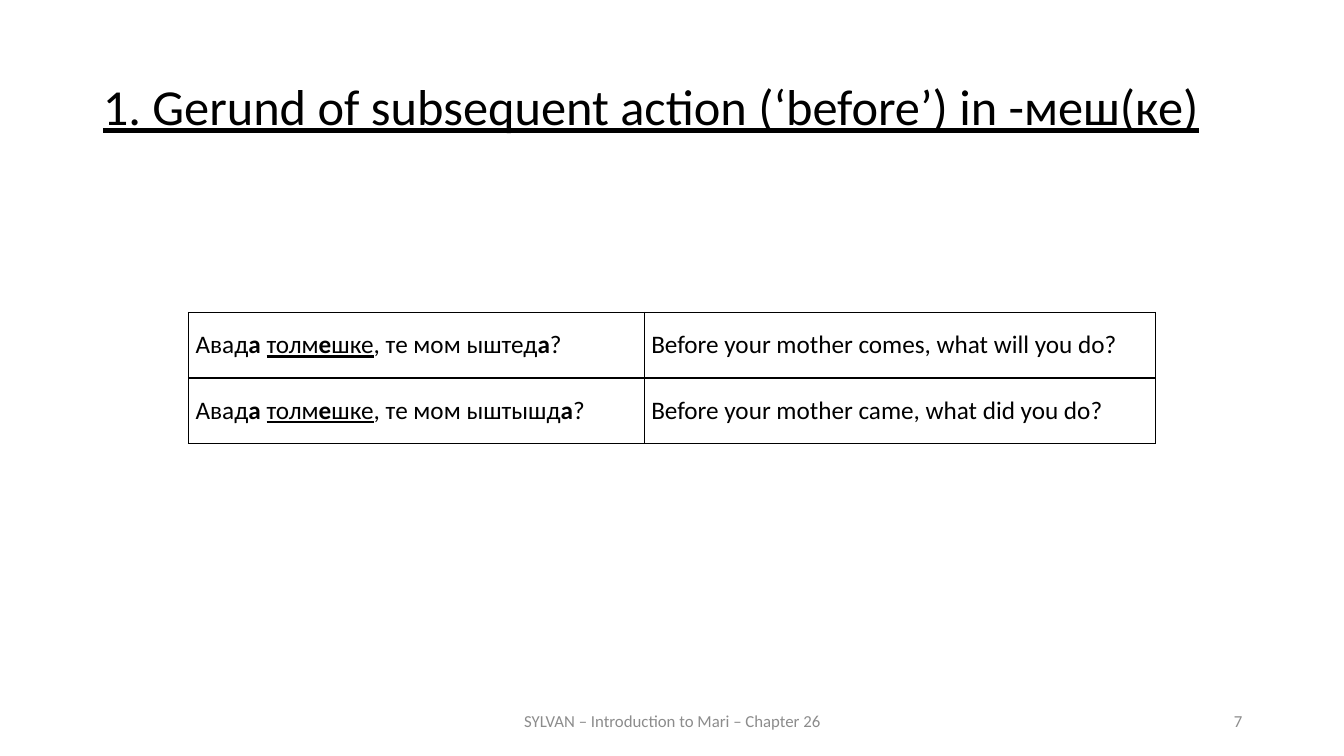
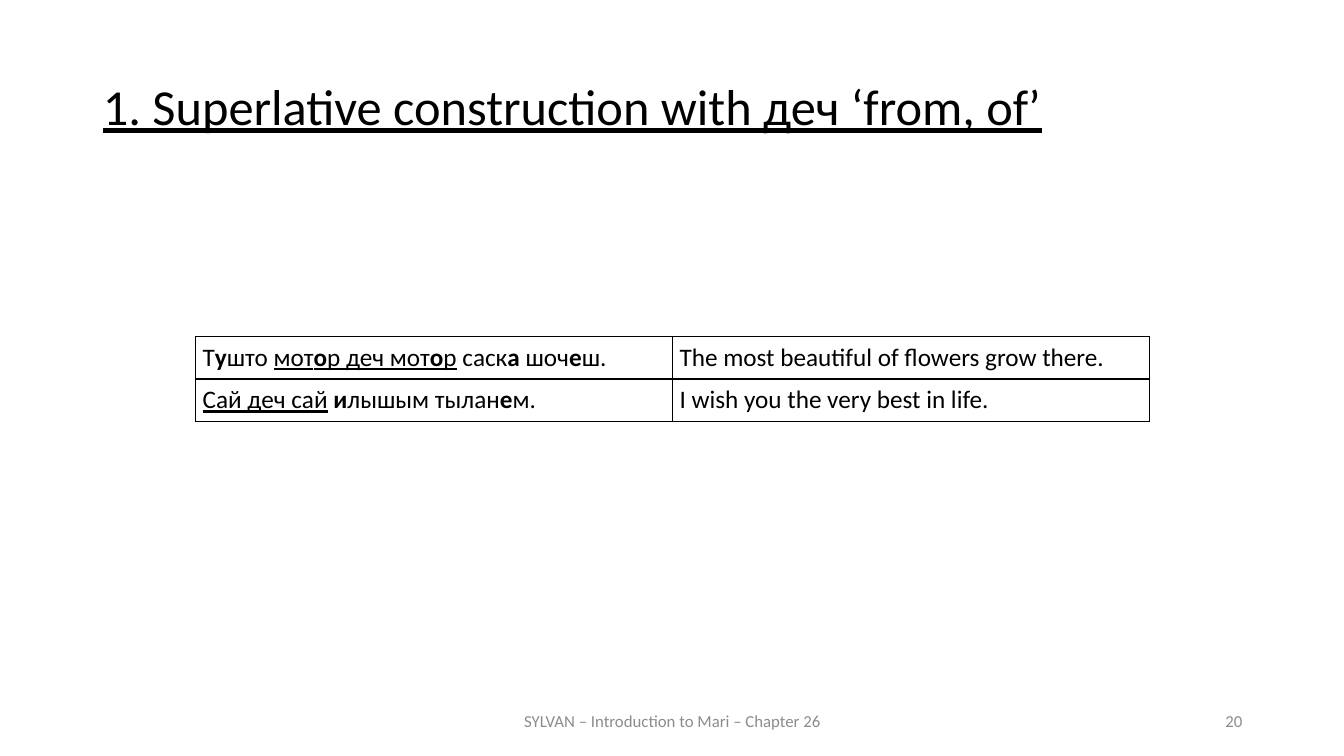
from dataclasses import dataclass

from lxml import etree
from pptx import Presentation
from pptx.dml.color import RGBColor
from pptx.enum.text import MSO_ANCHOR, MSO_AUTO_SIZE, PP_ALIGN
from pptx.oxml.ns import qn
from pptx.util import Inches, Pt

TOP, MIDDLE = MSO_ANCHOR.TOP, MSO_ANCHOR.MIDDLE
CENTER, RIGHT, JUSTIFY = PP_ALIGN.CENTER, PP_ALIGN.RIGHT, PP_ALIGN.JUSTIFY
NO_AUTOFIT = MSO_AUTO_SIZE.NONE

FONT = "Calibri"
COLORS = {"text": "000000", "border": "000000", "footer": "8C8C8C"}
FOOTER = "SYLVAN – Introduction to Mari – Chapter 26"
TITLE_ONLY = 5
BORDER_PT = 1


@dataclass
class ExampleSlide:
    """Example rows use *bold* for stressed vowels and _underline_ for the construction."""
    title: str
    number: int
    left: float
    top: float
    col_widths: tuple[float, ...]
    row_height: float
    rows: list[tuple[str, str]]


SLIDES = [
    ExampleSlide(
        "1. Gerund of subsequent action (‘before’) in -меш(ке)", 7,
        1.87, 3.1, (4.52, 5.07), 0.65,
        [("Авад*а *_толм*е*шке_, те мом ыштед*а*?",
          "Before your mother comes, what will you do?"),
         ("Авад*а *_толм*е*шке_, те мом ыштышд*а*?",
          "Before your mother came, what did you do?")]),
    ExampleSlide(
        "1. Superlative construction with деч ‘from, of’", 20,
        1.94, 3.34, (4.73, 4.73), 0.42,
        [("Т*у*што _мот*о*р деч мот*о*р_ саск*а* шоч*е*ш.",
          "The most beautiful of flowers grow there."),
         ("_Сай деч сай_ *и*лышым тылан*е*м.",
          "I wish you the very best in life.")]),
]


def style_run(r, size: float, color: str) -> None:
    r.font.name = FONT
    r.font.size = Pt(size)
    r.font.color.rgb = RGBColor.from_string(COLORS[color])


def add_title(s, text: str) -> None:
    sp = s.shapes.title
    sp.left, sp.top = Inches(0.92), Inches(0.76)
    sp.width, sp.height = Inches(11.5), Inches(0.83)
    tf = sp.text_frame
    tf.text = text
    tf.word_wrap = True
    tf.auto_size = NO_AUTOFIT
    tf.vertical_anchor = TOP
    p = tf.paragraphs[0]
    p.alignment = JUSTIFY
    p.line_spacing = 0.9
    p.space_before = Pt(12)
    r = p.runs[0]
    style_run(r, 36, "text")
    r.font.underline = True


def add_footer(s, text: str, left: float, width: float, align) -> None:
    sp = s.shapes.add_textbox(Inches(left), Inches(6.95), Inches(width), Inches(0.4))
    tf = sp.text_frame
    tf.text = text
    tf.word_wrap = True
    tf.vertical_anchor = MIDDLE
    p = tf.paragraphs[0]
    p.alignment = align
    style_run(p.runs[0], 12, "footer")


def add_marked_text(p, text: str) -> None:
    """Split the text at * and _ into bold and underlined runs."""
    bold = underline = False
    for part in text.replace("*", "|*|").replace("_", "|_|").split("|"):
        if part == "*":
            bold = not bold
        elif part == "_":
            underline = not underline
        elif part:
            r = p.add_run()
            r.text = part
            style_run(r, 18, "text")
            r.font.bold = bold
            r.font.underline = underline


def set_borders(cell) -> None:
    tc_pr = cell._tc.get_or_add_tcPr()
    for i, side in enumerate(("lnL", "lnR", "lnT", "lnB")):
        ln = etree.Element(qn(f"a:{side}"), w=str(Pt(BORDER_PT)))
        fill = etree.SubElement(ln, qn("a:solidFill"))
        etree.SubElement(fill, qn("a:srgbClr"), val=COLORS["border"])
        tc_pr.insert(i, ln)


def add_examples(s, data: ExampleSlide) -> None:
    n_rows, n_cols = len(data.rows), len(data.col_widths)
    table = s.shapes.add_table(
        n_rows, n_cols, Inches(data.left), Inches(data.top),
        Inches(sum(data.col_widths)), Inches(n_rows * data.row_height)).table
    table.first_row = table.horz_banding = False
    for column, width in zip(table.columns, data.col_widths):
        column.width = Inches(width)
    for i, row in enumerate(data.rows):
        for j, text in enumerate(row):
            cell = table.cell(i, j)
            cell.fill.background()
            cell.vertical_anchor = MIDDLE
            cell.margin_left = cell.margin_right = Inches(0.07)
            cell.margin_top = cell.margin_bottom = 0
            set_borders(cell)
            add_marked_text(cell.text_frame.paragraphs[0], text)


def main() -> None:
    prs = Presentation()
    prs.slide_width, prs.slide_height = Inches(13.33), Inches(7.5)
    for data in SLIDES:
        s = prs.slides.add_slide(prs.slide_layouts[TITLE_ONLY])
        add_title(s, data.title)
        add_examples(s, data)
        # Footer line and page number
        add_footer(s, FOOTER, 4.42, 4.5, CENTER)
        add_footer(s, str(data.number), 9.42, 3, RIGHT)
    prs.save("out.pptx")


if __name__ == "__main__":
    main()
